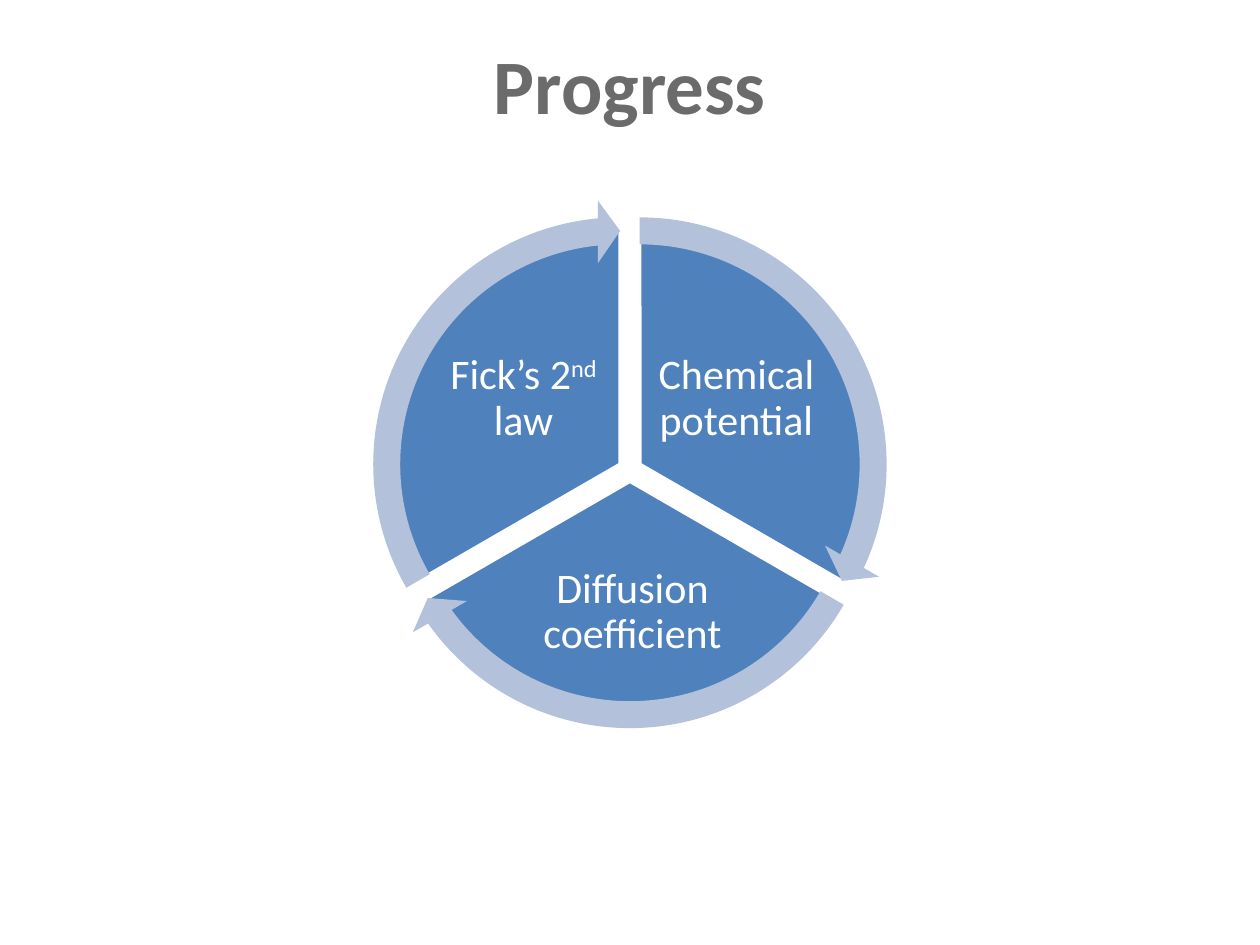
import copy
import math

import pptx
import pptx.util
from pptx.dml.color import RGBColor
from pptx.enum.shapes import MSO_SHAPE
from pptx.enum.text import MSO_ANCHOR, PP_ALIGN
from pptx.util import Inches

HUES = {
    "pie": "4F81BD",
    "arrow": "B3C1DB",
    "white": "FFFFFF",
    "dark": "4C4C4C",
    "mid": "6B6B6B",
    "light": "808080",
}
MID = (5.0, 3.73)
SHIFT = 0.09
PIE = 3.73
RING = 4.2
PARTS = [
    ("Chemical potential", -90, (5.18, 2.61, 1.33, 1.11), (161.99, 14.72)),
    ("Diffusion coefficient", 30, (4.02, 4.37, 2, 0.98), (18, 86.72)),
    ("Fick’s 2^nd^ law", 150, (3.49, 2.61, 1.33, 1.11), (90, 158.73)),
]


def color(name):
    """Return the named colour."""
    return RGBColor.from_string(HUES[name])


def write(frame, text, size=24, bold=False, hue="white", space=None):
    """Write centred text, with ^ marks around superscripts."""
    frame.word_wrap = True
    frame.vertical_anchor = MSO_ANCHOR.MIDDLE
    line = frame.paragraphs[0]
    line.alignment = PP_ALIGN.CENTER
    line.line_spacing = space
    for i, part in enumerate(text.split("^")):
        run = line.add_run()
        run.text = part
        run.font.name = "Calibri"
        run.font.size = pptx.util.Pt(size)
        run.font.bold = bold
        run.font.fill.solid()
        run.font.fill.fore_color.rgb = color(hue)
        if i % 2:
            run.font._element.set("baseline", "30000")
    return line


def shade(font, names):
    """Give a font an upward gradient with evenly spaced colours."""
    fill = font.fill
    fill.gradient()
    fill.gradient_angle = 90
    first = font._element.find(".//" + pptx.oxml.ns.qn("a:gs"))
    first.addnext(copy.deepcopy(first))
    for i, (stop, name) in enumerate(zip(fill.gradient_stops, names)):
        stop.position = i / (len(names) - 1)
        stop.color.rgb = color(name)


def round_shape(group, kind, turn, size, hue, adjust):
    """Add a round shape pushed out from the middle along its bisector."""
    angle = math.radians(turn + 60)
    left = MID[0] + SHIFT * math.cos(angle) - size / 2
    top = MID[1] + SHIFT * math.sin(angle) - size / 2
    shape = group.shapes.add_shape(
        kind, Inches(left), Inches(top), Inches(size), Inches(size))
    shape.shadow.inherit = False
    shape.fill.solid()
    shape.fill.fore_color.rgb = color(hue)
    shape.line.fill.background()
    for i, value in enumerate(adjust):
        shape.adjustments[i] = value
    return shape


def wedge(group, turn):
    """Add a third of the pie with a white edge."""
    ends = [(turn + step) % 360 * 0.6 for step in (0, 120)]
    shape = round_shape(group, MSO_SHAPE.PIE, turn, PIE, "pie", ends)
    shape.line.color.rgb = color("white")
    shape.line.width = pptx.util.Pt(2)


def label(group, text, box):
    """Add the text of a wedge."""
    frame = group.shapes.add_textbox(*map(Inches, box)).text_frame
    frame.margin_left = frame.margin_right = Inches(0.03)
    frame.margin_top = frame.margin_bottom = Inches(0.03)
    write(frame, text, space=0.9)


def arrow(group, turn, start, end):
    """Add the curved arrow along a wedge."""
    adjust = (0.051, 3.275, end, start, 0.059)
    round_shape(group, MSO_SHAPE.CIRCULAR_ARROW, turn, RING, "arrow", adjust)


def head(slide, text):
    """Place and fill the title."""
    title = slide.shapes.title
    title.left, title.top = Inches(0.5), Inches(0.25)
    title.width, title.height = Inches(9), Inches(0.83)
    line = write(title.text_frame, text, size=44, bold=True, hue="mid")
    shade(line.runs[0].font, ("dark", "mid", "light"))


def main():
    """Build the slide and save it."""
    deck = pptx.Presentation()
    deck.slide_width, deck.slide_height = Inches(10), Inches(7.5)
    slide = deck.slides.add_slide(deck.slide_layouts[5])
    head(slide, "Progress")
    group = slide.shapes.add_group_shape()
    for text, turn, box, _ in PARTS:
        wedge(group, turn)
        label(group, text, box)
    for _, turn, _, ends in PARTS:
        arrow(group, turn, *ends)
    deck.save("out.pptx")


if __name__ == "__main__":
    main()
